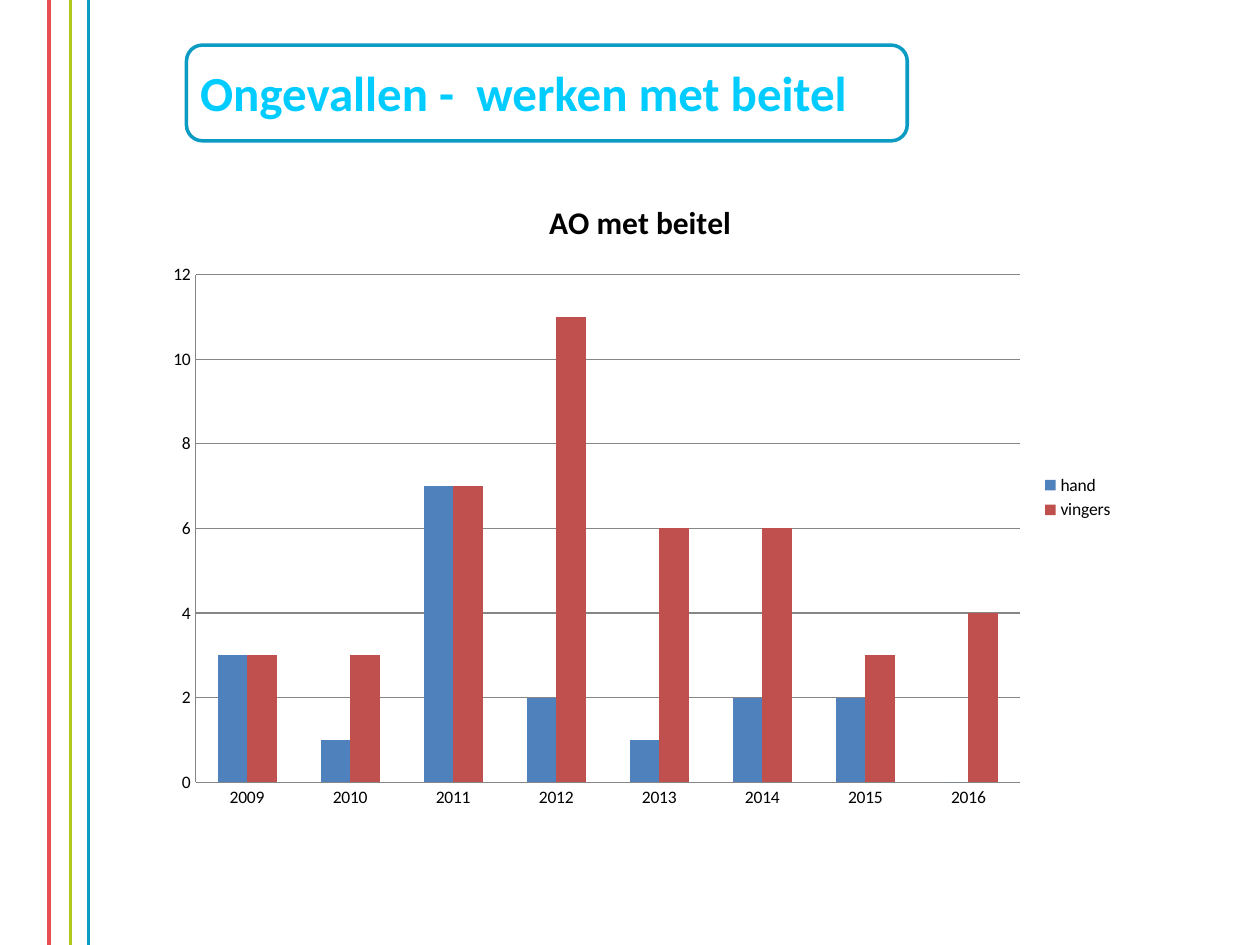
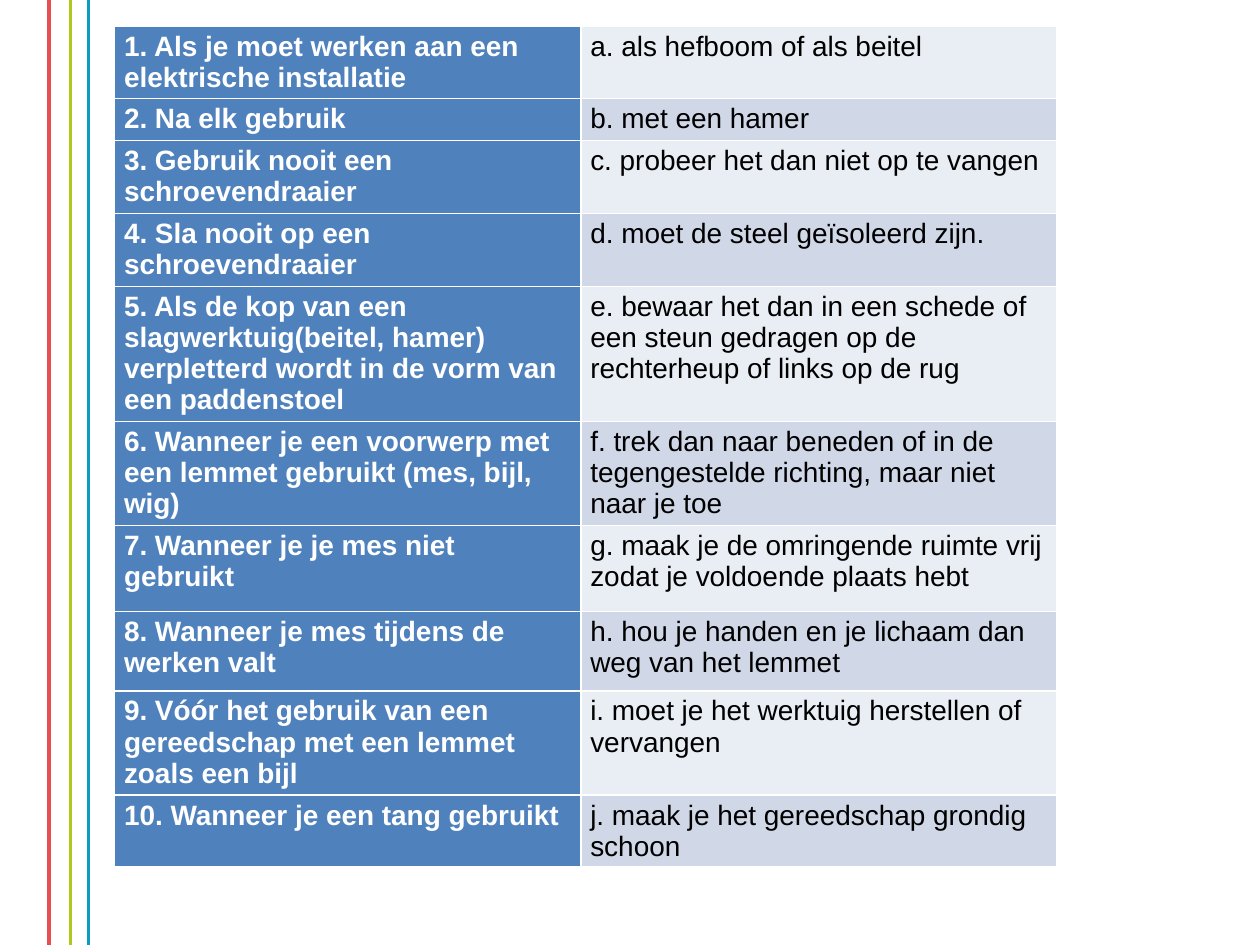
import pptx
import pptx.util
import pptx.chart.data
import pptx.oxml.ns
from lxml import etree
from pptx.dml.color import RGBColor
from pptx.enum.chart import XL_CHART_TYPE, XL_LEGEND_POSITION, XL_TICK_MARK
from pptx.enum.shapes import MSO_CONNECTOR, MSO_SHAPE
from pptx.enum.text import MSO_ANCHOR, PP_ALIGN
from pptx.util import Cm, Pt

RED = RGBColor(0xE8, 0x4E, 0x4F)
GREEN = RGBColor(0xB0, 0xC8, 0x1B)
TEAL = RGBColor(0x0C, 0x9B, 0xC2)
CYAN = RGBColor(0x00, 0xCC, 0xFF)
BLUE = RGBColor(0x4F, 0x81, 0xBD)
BRICK = RGBColor(0xC0, 0x50, 0x4D)
GRAY = RGBColor(0x86, 0x86, 0x86)
BLACK = RGBColor(0x00, 0x00, 0x00)
WHITE = RGBColor(0xFF, 0xFF, 0xFF)
ROW_TINTS = (RGBColor(0xE9, 0xED, 0xF4), RGBColor(0xD0, 0xD8, 0xE8))


def style_font(font, name, size, color, bold=False):
    font.name = name
    font.size = Pt(size)
    font.color.rgb = color
    font.bold = bold


deck = pptx.Presentation()
deck.slide_width = Cm(25.4)
deck.slide_height = Cm(19.05)
chart_page = deck.slides.add_slide(deck.slide_layouts[5])
table_page = deck.slides.add_slide(deck.slide_layouts[6])

# Vertical rules, moved to the master so that both slides share them
for x, color in ((0.99, RED), (1.42, GREEN), (1.78, TEAL)):
    rule = chart_page.shapes.add_connector(
        MSO_CONNECTOR.STRAIGHT, Cm(x), 0, Cm(x), deck.slide_height)
    rule.line.color.rgb = color
    rule.line.width = Pt(2)
    etree.SubElement(rule.element.spPr, pptx.oxml.ns.qn("a:effectLst"))
    deck.slide_master.element.cSld.spTree.append(rule.element)

# Slide 1: framed title and accident chart
frame = chart_page.shapes.add_shape(
    MSO_SHAPE.ROUNDED_RECTANGLE, Cm(3.76), Cm(0.91), Cm(14.53), Cm(1.93))
frame.shadow.inherit = False
frame.fill.background()
frame.line.color.rgb = TEAL
frame.line.width = Pt(2)

title = chart_page.shapes.title
title.left, title.top, title.width, title.height = Cm(3.78), Cm(1.14), Cm(14.12), Cm(1.45)
title.text_frame.vertical_anchor = MSO_ANCHOR.TOP
para = title.text_frame.paragraphs[0]
para.alignment = PP_ALIGN.LEFT
span = para.add_run()
span.text = "Ongevallen -  werken met beitel"
style_font(span.font, "Calibri", 28, CYAN, bold=True)

accidents = pptx.chart.data.CategoryChartData()
accidents.categories = [str(year) for year in range(2009, 2017)]
accidents.add_series("hand", (3, 1, 7, 2, 1, 2, 2, 0))
accidents.add_series("vingers", (3, 3, 7, 11, 6, 6, 3, 4))
chart = chart_page.shapes.add_chart(
    XL_CHART_TYPE.COLUMN_CLUSTERED, Cm(3.1), Cm(3.53), Cm(19.61), Cm(13), accidents).chart
style_font(chart.font, "Calibri", 10, BLACK)

chart.has_title = True
span = chart.chart_title.text_frame.paragraphs[0].add_run()
span.text = "AO met beitel"
style_font(span.font, "Calibri", 18, BLACK, bold=True)
chart.chart_title.include_in_layout = False

chart.has_legend = True
chart.legend.position = XL_LEGEND_POSITION.RIGHT
chart.legend.include_in_layout = False

for axis in (chart.category_axis, chart.value_axis):
    axis.major_tick_mark = XL_TICK_MARK.NONE
    axis.minor_tick_mark = XL_TICK_MARK.NONE
    axis.format.line.color.rgb = GRAY
chart.value_axis.major_gridlines.format.line.color.rgb = GRAY

plot = chart.plots[0]
plot.gap_width = 150
plot.overlap = 0
plot.vary_by_categories = False
for series, color in zip(plot.series, (BLUE, BRICK)):
    series.format.fill.solid()
    series.format.fill.fore_color.rgb = color

# Slide 2: matching exercise (row height in cm, situation, advice)
exercise = (
    (1.43, "1. Als je moet werken aan een elektrische installatie",
     "a. als hefboom of als beitel"),
    (0.85, "2. Na elk gebruik", "b. met een hamer"),
    (1.47, "3. Gebruik nooit een schroevendraaier",
     "c. probeer het dan niet op te vangen"),
    (1.47, "4. Sla nooit op een schroevendraaier",
     "d. moet de steel geïsoleerd zijn."),
    (2.72, "5. Als de kop van een slagwerktuig(beitel, hamer) verpletterd wordt "
     "in de vorm van een paddenstoel",
     "e. bewaar het dan in een schede of een steun gedragen op de rechterheup "
     "of links op de rug"),
    (2.1, "6. Wanneer je een voorwerp met een lemmet gebruikt (mes, bijl, wig)",
     "f. trek dan naar beneden of in de tegengestelde richting, maar niet naar je toe"),
    (1.73, "7. Wanneer je je mes niet gebruikt",
     "g. maak je de omringende ruimte vrij zodat je voldoende plaats hebt"),
    (1.6, "8. Wanneer je mes tijdens de werken valt",
     "h. hou je handen en je lichaam dan weg van het lemmet"),
    (2.1, "9. Vóór het gebruik van een gereedschap met een lemmet zoals een bijl",
     "i. moet je het werktuig herstellen of vervangen"),
    (1.45, "10. Wanneer je een tang gebruikt",
     "j. maak je het gereedschap grondig schoon"),
)
table_height = Cm(sum(height for height, *texts in exercise))
table = table_page.shapes.add_table(
    len(exercise), 2, Cm(2.31), Cm(0.53), Cm(19), table_height).table
table.first_col = True
table.columns[0].width = Cm(9.4)
table.columns[1].width = Cm(9.6)

for row_index, (height, *texts) in enumerate(exercise):
    table.rows[row_index].height = Cm(height)
    looks = ((BLUE, WHITE, True), (ROW_TINTS[row_index % 2], BLACK, False))
    for cell, text, (fill, color, bold) in zip(table.rows[row_index].cells, texts, looks):
        cell.fill.solid()
        cell.fill.fore_color.rgb = fill
        cell.margin_left = cell.margin_right = Cm(0.19)
        cell.margin_top = cell.margin_bottom = Cm(0.1)
        span = cell.text_frame.paragraphs[0].add_run()
        span.text = text
        style_font(span.font, "Arial", 16, color, bold)

deck.save("out.pptx")
